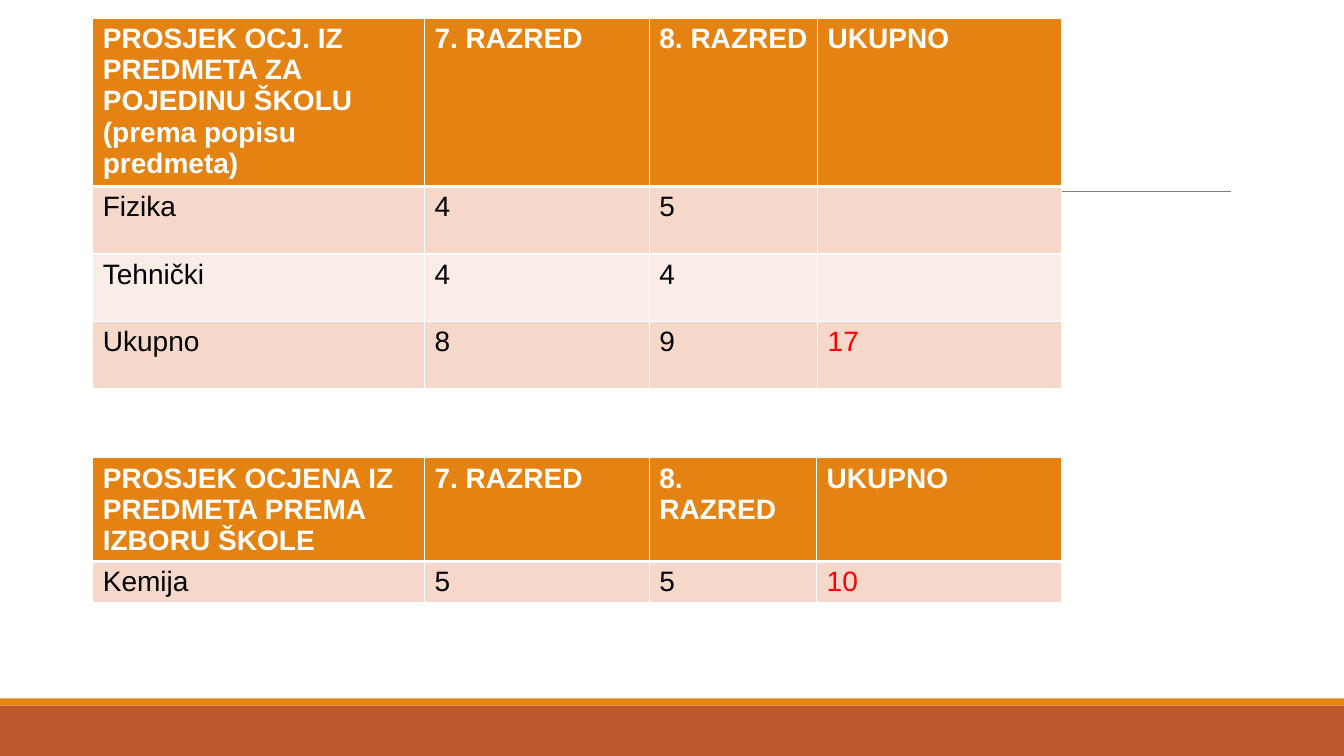
import pptx
import pptx.util
import pptx.dml.color
import pptx.enum.shapes
import pptx.oxml.ns
from lxml import etree

Inches, Pt = pptx.util.Inches, pptx.util.Pt
ORANGE, RUST, WHITE, BLACK, RED = "E48312", "BD582C", "FFFFFF", "000000", "FF0000"
BANDS = ("F5D8CA", "FAECE6")


def rgb(value):
    return pptx.dml.color.RGBColor.from_string(value)


def sub(parent, tag, **attrs):
    return etree.SubElement(parent, pptx.oxml.ns.qn(tag), **attrs)


class SlideBuilder:
    font = {"name": "Arial", "size": Pt(20)}
    table_flags = {"first_row": False, "horz_banding": False}

    def __init__(self, slide):
        self.slide = slide

    def bar(self, top, height, color):
        sp = self.slide.shapes.add_shape(
            pptx.enum.shapes.MSO_SHAPE.RECTANGLE,
            0, Inches(top), Inches(13.33), Inches(height))
        sp.shadow.inherit = False
        sp.fill.solid()
        sp.fill.fore_color.rgb = rgb(color)
        sp.line.fill.background()

    def rule(self, left, right, y, color):
        line = self.slide.shapes.add_connector(
            pptx.enum.shapes.MSO_CONNECTOR.STRAIGHT,
            Inches(left), Inches(y), Inches(right), Inches(y))
        line.line.color.rgb = rgb(color)
        line.line.width = Pt(0.75)
        sub(line._element.spPr, "a:effectLst")

    def borders(self, cell, widths):
        tcPr = cell._tc.get_or_add_tcPr()
        for side, width in widths.items():
            ln = sub(tcPr, f"a:ln{side}", w=str(Pt(width)))
            sub(sub(ln, "a:solidFill"), "a:srgbClr", val=WHITE)

    def cell(self, cell, text, fill, color, bold, widths):
        self.borders(cell, widths)
        cell.fill.solid()
        cell.fill.fore_color.rgb = rgb(fill)
        p = cell.text_frame.paragraphs[0]
        if not text:
            return
        r = p.add_run()
        r.text = text
        for key, value in {**self.font, "bold": bold}.items():
            setattr(r.font, key, value)
        r.font.color.rgb = rgb(color)

    def table(self, top, cols, heights, rows):
        table = self.slide.shapes.add_table(
            len(rows), len(cols), Inches(0.92), Inches(top),
            Inches(sum(cols)), Inches(sum(heights))).table
        for key, value in self.table_flags.items():
            setattr(table, key, value)
        for col, width in zip(table.columns, cols):
            col.width = Inches(width)
        for i, (height, row) in enumerate(zip(heights, rows)):
            table.rows[i].height = Inches(height)
            head = i == 0
            # Each row's top edge is drawn by the row above it
            widths = {"L": 1, "R": 1, "T": 1, "B": 3} if head else {"L": 1, "R": 1, "B": 1}
            fill = ORANGE if head else BANDS[(i - 1) % 2]
            for j, text in enumerate(row):
                total = j == len(row) - 1
                color = WHITE if head else RED if total else BLACK
                self.cell(table.cell(i, j), text, fill, color, head, widths)


def main():
    prs = pptx.Presentation()
    prs.slide_width, prs.slide_height = Inches(13.33), Inches(7.5)
    s = SlideBuilder(prs.slides.add_slide(prs.slide_layouts[6]))

    # Footer bars and title rule
    s.bar(7, 0.5, RUST)
    s.bar(6.93, 0.07, ORANGE)
    s.rule(1.31, 12.21, 1.9, "7F7F7F")

    # Grade tables
    grades = ["7. RAZRED", "8. RAZRED", "UKUPNO"]
    s.table(0.18, [3.29, 2.23, 1.67, 2.42], [1.67] + [0.67] * 3, [
        ["PROSJEK OCJ. IZ PREDMETA ZA POJEDINU ŠKOLU (prema popisu predmeta)"] + grades,
        ["Fizika", "4", "5", ""],
        ["Tehnički", "4", "4", ""],
        ["Ukupno", "8", "9", "17"],
    ])
    s.table(4.54, [3.29, 2.23, 1.66, 2.43], [1.02, 0.41], [
        ["PROSJEK OCJENA IZ PREDMETA PREMA IZBORU ŠKOLE"] + grades,
        ["Kemija", "5", "5", "10"],
    ])

    prs.save("out.pptx")


if __name__ == "__main__":
    main()
